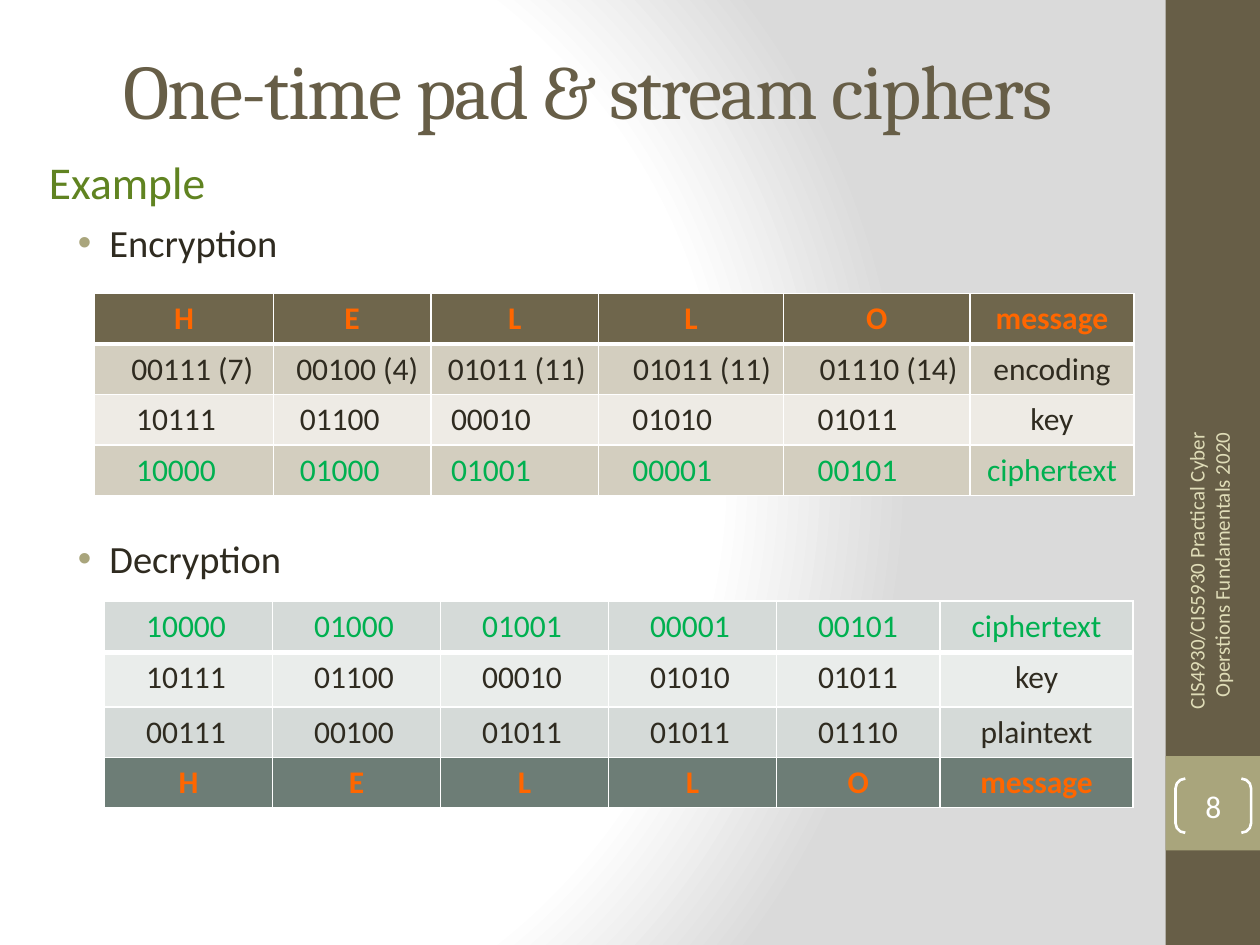
from pptx import Presentation
from pptx.dml.color import RGBColor
from pptx.enum.shapes import MSO_SHAPE as Shape
from pptx.enum.text import MSO_ANCHOR as Anchor, PP_ALIGN as Align
from pptx.oxml import parse_xml
from pptx.oxml.ns import nsdecls
from pptx.util import Inches, Pt

BROWN = RGBColor(0x67, 0x5E, 0x47)
KHAKI = RGBColor(0xA9, 0xA5, 0x7C)
CREAM = RGBColor(0xDF, 0xDC, 0xB7)
INK = RGBColor(0x2F, 0x2B, 0x20)
OLIVE = RGBColor(0x60, 0x83, 0x21)
GREEN = RGBColor(0x00, 0xB0, 0x50)
ORANGE = RGBColor(0xFF, 0x66, 0x00)
WHITE = RGBColor(0xFF, 0xFF, 0xFF)
TAN_DARK = RGBColor(0x6F, 0x66, 0x4C)
TAN = RGBColor(0xD3, 0xCE, 0xBF)
TAN_LIGHT = RGBColor(0xEE, 0xEB, 0xE5)
SAGE_DARK = RGBColor(0x6D, 0x7D, 0x76)
SAGE = RGBColor(0xD5, 0xDA, 0xD8)
SAGE_LIGHT = RGBColor(0xEA, 0xED, 0xEB)

LETTERS = ["H", "E", "L", "L", "O", "message"]
KEY = ["10111", "01100", "00010", "01010", "01011", "key"]
CIPHERTEXT = ["10000", "01000", "01001", "00001", "00101", "ciphertext"]
ENCODING = ["00111 (7)", "00100 (4)", "01011 (11)", "01011 (11)", "01110 (14)", "encoding"]
PLAINTEXT = ["00111", "00100", "01011", "01011", "01110", "plaintext"]


def set_background(slide):
    stops = "".join(
        f'<a:gs pos="{pos}"><a:srgbClr val="{color}"/></a:gs>'
        for pos, color in ((0, "FFFFFF"), (75000, "FFFFFF"), (100000, "DADADA"))
    )
    slide.element.cSld.insert(0, parse_xml(
        f'<p:bg {nsdecls("p", "a")}><p:bgPr><a:gradFill><a:gsLst>{stops}</a:gsLst>'
        '<a:path path="circle"><a:fillToRect l="20000" t="50000" r="100000" b="50000"/></a:path>'
        '</a:gradFill><a:effectLst/></p:bgPr></p:bg>'
    ))


def add_run(paragraph, text, size, color, font="Calibri", bold=False):
    run = paragraph.add_run()
    run.text = text
    run.font.size = Pt(size)
    run.font.name = font
    run.font.bold = bold
    run.font.color.rgb = color
    return run


def add_band(slide, top, height, color):
    band = slide.shapes.add_shape(
        Shape.RECTANGLE, Inches(9.25), Inches(top), Inches(0.75), Inches(height))
    band.shadow.inherit = False
    band.fill.solid()
    band.fill.fore_color.rgb = color
    band.line.fill.background()


def set_title(slide, text):
    title = slide.shapes.title
    title.left, title.top = Inches(0.5), Inches(0.08)
    title.width, title.height = Inches(8.33), Inches(1.25)
    title.text_frame.vertical_anchor = Anchor.MIDDLE
    heading = title.text_frame.paragraphs[0]
    heading.alignment = Align.CENTER
    run = add_run(heading, text, 44, BROWN, "Cambria")
    run.font._element.set("spc", "-100")


def add_text_box(slide, left, top, width, height):
    box = slide.shapes.add_textbox(Inches(left), Inches(top), Inches(width), Inches(height))
    box.text_frame.word_wrap = True
    return box


def indent(paragraph, left, first=0.0, bullet=False):
    properties = paragraph._p.get_or_add_pPr()
    properties.set("marL", str(Inches(left)))
    properties.set("indent", str(Inches(first)))
    if bullet:
        for tag in (f'<a:buClr {nsdecls("a")}><a:srgbClr val="{KHAKI}"/></a:buClr>',
                    f'<a:buFont {nsdecls("a")} typeface="Arial"/>',
                    f'<a:buChar {nsdecls("a")} char="•"/>'):
            properties.append(parse_xml(tag))


def add_outline(slide):
    frame = add_text_box(slide, 0.17, 1.17, 8.92, 5.42).text_frame
    example = frame.paragraphs[0]
    indent(example, 0.12)
    example.space_after = Pt(6)
    add_run(example, "Example", 26, OLIVE)
    for text, before, after in (("Encryption", 0, 150), ("Decryption", 4.4, 0)):
        item = frame.add_paragraph()
        indent(item, 0.6, -0.25, bullet=True)
        item.space_before, item.space_after = Pt(before), Pt(after)
        add_run(item, text, 22, INK)


def set_borders(cell, row):
    widths = {"L": 1, "R": 1, "T": 3 if row == 1 else 1, "B": 3 if row == 0 else 1}
    for side, width in widths.items():
        cell._tc.get_or_add_tcPr().append(parse_xml(
            f'<a:ln{side} {nsdecls("a")} w="{Pt(width)}"><a:solidFill>'
            f'<a:srgbClr val="{WHITE}"/></a:solidFill></a:ln{side}>'))


def add_cipher_table(slide, left, top, widths, heights, rows, left_margins):
    table = slide.shapes.add_table(
        len(rows), len(widths), Inches(left), Inches(top),
        Inches(sum(widths)), Inches(sum(heights))).table
    table.horz_banding = False
    for column, width in zip(table.columns, widths):
        column.width = Inches(width)
    for r, (texts, fill, color, align) in enumerate(rows):
        table.rows[r].height = Inches(heights[r])
        for c, text in enumerate(texts):
            cell = table.cell(r, c)
            set_borders(cell, r)
            cell.fill.solid()
            cell.fill.fore_color.rgb = fill
            label = c == len(texts) - 1
            if align == Align.LEFT and not label:
                cell.margin_left = Inches(left_margins[c])
            if align == Align.RIGHT and c == 0:
                cell.margin_right = Inches(0.16)
            paragraph = cell.text_frame.paragraphs[0]
            paragraph.alignment = Align.CENTER if label else align
            add_run(paragraph, text, 18, color, bold=color == ORANGE)


def add_footer(slide, text):
    footer = add_text_box(slide, 8.3, 4.43, 2.59, 0.4)
    footer.rotation = 270
    footer.text_frame.vertical_anchor = Anchor.MIDDLE
    line = footer.text_frame.paragraphs[0]
    line.alignment = Align.RIGHT
    add_run(line, text, 12, CREAM)


def add_page_number(slide, number):
    bracket = slide.shapes.add_shape(
        Shape.DOUBLE_BRACKET, Inches(9.33), Inches(6.18), Inches(0.6), Inches(0.43))
    bracket.adjustments[0] = 0.18
    bracket.shadow.inherit = False
    bracket.fill.background()
    bracket.line.color.rgb = WHITE
    bracket.line.width = Pt(1.5)
    frame = bracket.text_frame
    frame.margin_left = frame.margin_right = frame.margin_top = frame.margin_bottom = 0
    frame.vertical_anchor = Anchor.MIDDLE
    frame.paragraphs[0].alignment = Align.CENTER
    add_run(frame.paragraphs[0], number, 18, WHITE)


def main():
    deck = Presentation()
    deck.slide_width, deck.slide_height = Inches(10), Inches(7.5)
    slide = deck.slides.add_slide(deck.slide_layouts[5])
    set_background(slide)
    add_band(slide, 0, 7.5, BROWN)
    add_band(slide, 6, 0.75, KHAKI)
    set_title(slide, "One-time pad & stream ciphers")
    add_outline(slide)
    add_cipher_table(
        slide, 0.75, 2.33, [1.42, 1.25, 1.33, 1.47, 1.48, 1.3], [0.4] * 4,
        [(LETTERS, TAN_DARK, ORANGE, Align.CENTER),
         (ENCODING, TAN, INK, Align.RIGHT),
         (KEY, TAN_LIGHT, INK, Align.LEFT),
         (CIPHERTEXT, TAN, GREEN, Align.LEFT)],
        [0.33, 0.21, 0.16, 0.27, 0.27])
    add_cipher_table(
        slide, 0.83, 4.77, [4 / 3] * 4 + [1.3, 1.53], [0.41, 0.43, 0.4, 0.4],
        [(CIPHERTEXT, SAGE, GREEN, Align.LEFT),
         (KEY, SAGE_LIGHT, INK, Align.LEFT),
         (PLAINTEXT, SAGE, INK, Align.LEFT),
         (LETTERS, SAGE_DARK, ORANGE, Align.CENTER)],
        [0.33] * 5)
    add_footer(slide, "CIS4930/CIS5930 Practical Cyber Operstions Fundamentals 2020")
    add_page_number(slide, "8")
    deck.save("out.pptx")


if __name__ == "__main__":
    main()
